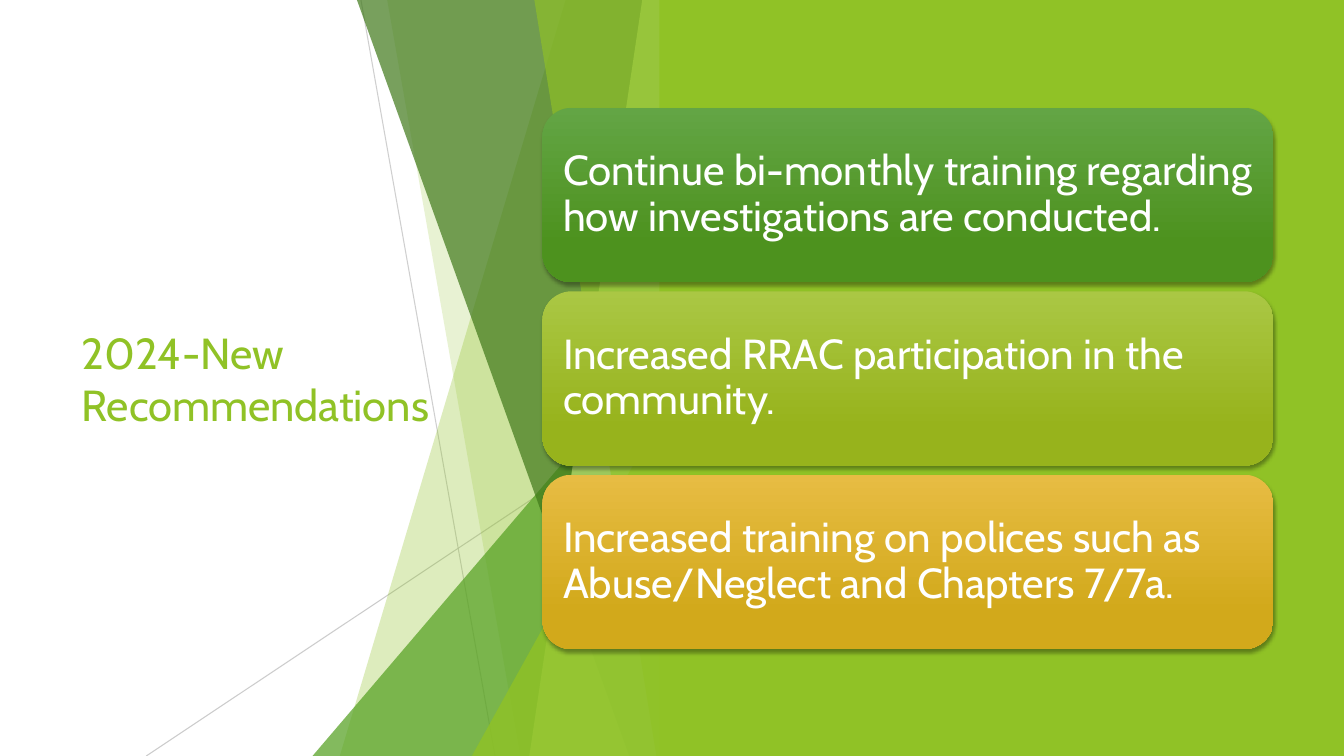
from lxml import etree
from pptx import Presentation, util as u
from pptx.dml.color import RGBColor
from pptx.enum import shapes as sh, text as tx
from pptx.oxml.ns import qn

W, H = 13.33, 7.5
FONT = "Cabin"
HUES = {
    "lime": "90C226", "leaf": "54A021", "moss": "3F7819", "pale": "C0E474",
    "grey": "BFBFBF", "white": "FFFFFF", "black": "000000",
}
CARDS = [
    ("Continue bi-monthly training regarding how investigations are conducted.",
     "63A545", "4D921E"),
    ("Increased RRAC participation in the community.", "AAC744", "97B31C"),
    ("Increased training on polices such as Abuse/Neglect and Chapters 7/7a.",
     "E7BC43", "D2A91B"),
]


def rgb(hue):
    """Return the colour for a hue name or a hex string."""
    return RGBColor.from_string(HUES.get(hue, hue))


def fade(fill, pct):
    """Make a solid fill or line fill partly opaque."""
    node = fill._xPr.find(".//" + qn("a:srgbClr"))
    etree.SubElement(node, qn("a:alpha"), val=str(pct * 1000))


def paint(shape, hue, pct=100):
    """Give a shape a flat fill with no line and no shadow."""
    shape.shadow.inherit = False
    shape.line.fill.background()
    shape.fill.solid()
    shape.fill.fore_color.rgb = rgb(hue)
    if pct < 100:
        fade(shape.fill, pct)


def add(slide, kind, box):
    """Add a preset shape in a box given in inches."""
    return slide.shapes.add_shape(kind, *map(u.Inches, box))


def write(shape, words, size, hue, inset):
    """Write one left-aligned, vertically centred paragraph."""
    frame = shape.text_frame
    frame.word_wrap = True
    frame.vertical_anchor = tx.MSO_ANCHOR.MIDDLE
    frame.margin_left = frame.margin_right = u.Inches(inset)
    frame.margin_top = frame.margin_bottom = u.Inches(inset)
    para = frame.paragraphs[0]
    para.text = words
    para.alignment = tx.PP_ALIGN.LEFT
    para.font.name, para.font.size = FONT, u.Pt(size)
    para.font.color.rgb = rgb(hue)
    return para


def ray(slide, start, end, pct):
    """Draw a thin grey line between two points."""
    line = slide.shapes.add_connector(
        sh.MSO_CONNECTOR.STRAIGHT, *map(u.Inches, start + end))
    line.line.width = u.Pt(0.75)
    line.line.color.rgb = rgb("grey")
    fade(line.line.fill, pct)
    etree.SubElement(line._element.spPr, qn("a:effectLst"))


def blade(slide, box, top, foot, hue, pct):
    """Fill from a slanted left edge to the right side of the box."""
    x, y, w, h = box
    build = slide.shapes.build_freeform(
        u.Inches(x + top), u.Inches(y), scale=1.0)
    points = [(x + w, y), (x + w, y + h), (x + foot, y + h)]
    build.add_line_segments([tuple(map(u.Inches, p)) for p in points])
    paint(build.convert_to_shape(), hue, pct)


def wedge(slide, box, left, top, hue, pct):
    """Fill a right triangle in the lower right corner of the box."""
    x, y, w, h = box
    shape = add(slide, sh.MSO_SHAPE.ISOSCELES_TRIANGLE,
                (x + left, y + top, w - left, h - top))
    shape.adjustments[0] = 1
    paint(shape, hue, pct)


def facet(slide, box):
    """Draw the band of overlapping translucent facets."""
    x, y, w, h = box
    ray(slide, (x + 0.48, y), (x + 1.81, y + h), 75)
    ray(slide, (x + w, y + 4.03), (x - 1.65, y + h), 80)
    for draw, a, b, hue, pct in [
        (blade, 2.51, 0.27, "lime", 30),
        (blade, 0.74, 2.06, "lime", 20),
        (wedge, 0, 3.33, "leaf", 72),
        (blade, 0.44, 3.14, "moss", 70),
        (blade, 3.27, 2.15, "pale", 70),
        (blade, 2.2, 3.41, "lime", 65),
        (wedge, 1.58, 3.93, "lime", 80),
    ]:
        draw(slide, box, a, b, hue, pct)


def panel(slide, box):
    """Draw the plain panel behind the cards."""
    paint(add(slide, sh.MSO_SHAPE.RECTANGLE, box), "lime")


def title(slide, box):
    """Place the slide title."""
    area = slide.shapes.add_textbox(*map(u.Inches, box))
    write(area, "2024-New Recommendations", 31, "lime", 0.1)


def shade(shape):
    """Add a soft shadow under a shape."""
    shape.shadow.inherit = False
    effects = shape._element.spPr.find(qn("a:effectLst"))
    outer = etree.SubElement(
        effects, qn("a:outerShdw"), blurRad=str(u.Pt(3)), dist=str(u.Pt(2)),
        dir="5400000", rotWithShape="0")
    tone = etree.SubElement(outer, qn("a:srgbClr"), val=HUES["black"])
    etree.SubElement(tone, qn("a:alpha"), val="35000")


def card(slide, box, words, light, dark):
    """Draw one shaded card with its text."""
    shape = add(slide, sh.MSO_SHAPE.ROUNDED_RECTANGLE, box)
    shape.line.fill.background()
    shape.fill.gradient()
    shape.fill.gradient_angle = 270
    for stop, hue, spot in zip(
            shape.fill.gradient_stops, (light, dark), (0, 0.78)):
        stop.color.rgb, stop.position = rgb(hue), spot
    shade(shape)
    write(shape, words, 30, "white", 0.12).line_spacing = 0.9


def stack(slide, box, gap):
    """Share the box out among the cards, one per row."""
    x, y, w, h = box
    tall = (h - gap * (len(CARDS) - 1)) / len(CARDS)
    for row, item in enumerate(CARDS):
        card(slide, (x, y + row * (tall + gap), w, tall), *item)


def main():
    """Build the slide and save it."""
    deck = Presentation()
    deck.slide_width, deck.slide_height = u.Inches(W), u.Inches(H)
    slide = deck.slides.add_slide(deck.slide_layouts[6])
    title(slide, (0.71, 1.51, 3.88, 4.48))
    facet(slide, (3.1, 0, 3.56, H))
    panel(slide, (6.54, 0, W - 6.54, H))
    stack(slide, (5.38, 1.07, 7.25, 5.37), 0.09)
    deck.save("out.pptx")


if __name__ == "__main__":
    main()
